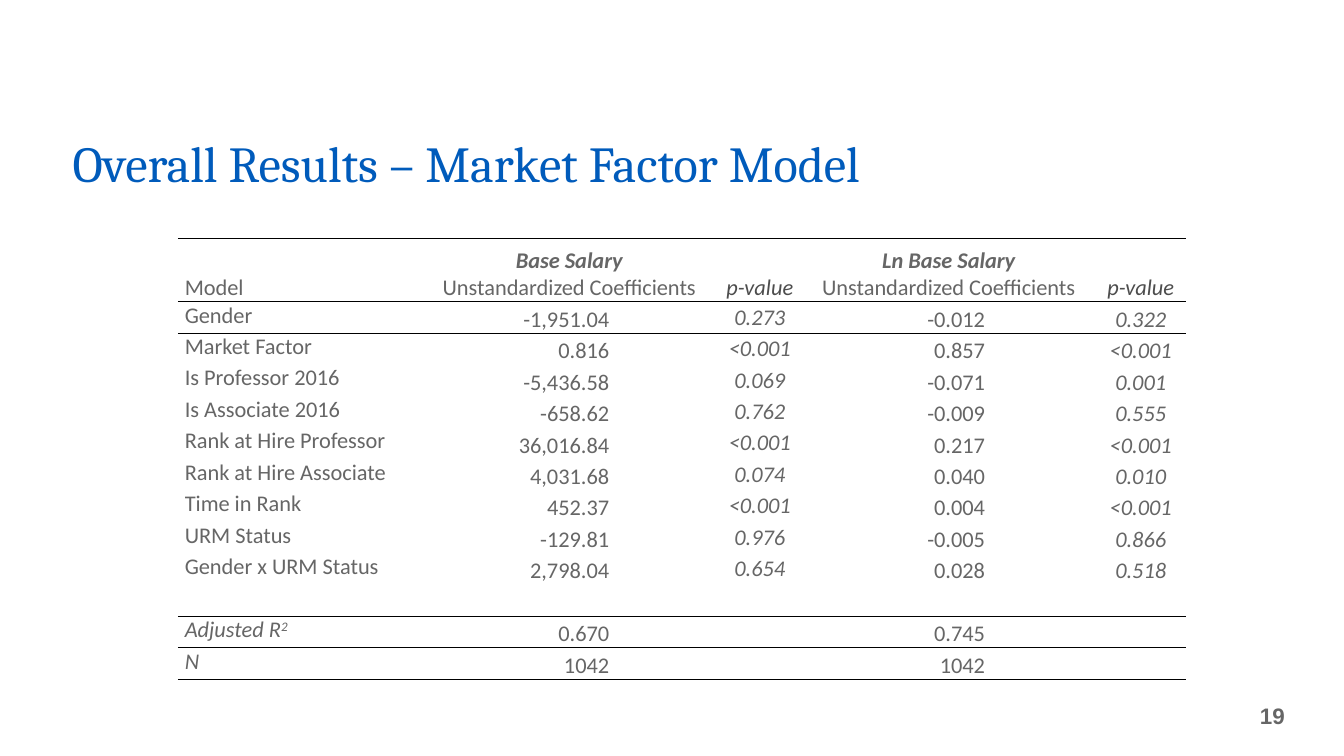
from lxml import etree
from pptx import Presentation
from pptx import util as u
from pptx.dml.color import RGBColor
from pptx.enum import text
from pptx.oxml.ns import qn

TITLE = "Overall Results – Market Factor Model"
PAGE = "19"
COEFFICIENTS = "Unstandardized Coefficients"
HEADER = ["Model", ["Base Salary", COEFFICIENTS], "p-value",
          ["Ln Base Salary", COEFFICIENTS], "p-value"]
ROWS = [
    ("Gender", "-1,951.04", "0.273", "-0.012", "0.322"),
    ("Market Factor", "0.816", "<0.001", "0.857", "<0.001"),
    ("Is Professor 2016", "-5,436.58", "0.069", "-0.071", "0.001"),
    ("Is Associate 2016", "-658.62", "0.762", "-0.009", "0.555"),
    ("Rank at Hire Professor", "36,016.84", "<0.001", "0.217", "<0.001"),
    ("Rank at Hire Associate", "4,031.68", "0.074", "0.040", "0.010"),
    ("Time in Rank", "452.37", "<0.001", "0.004", "<0.001"),
    ("URM Status", "-129.81", "0.976", "-0.005", "0.866"),
    ("Gender x URM Status", "2,798.04", "0.654", "0.028", "0.518"),
    ("", "", "", "", ""),
    ("Adjusted R", "0.670", "", "0.745", ""),
    ("N", "1042", "", "1042", ""),
]
SUMMARY = ("Adjusted R", "N")
COLORS = {"title": "005BBB", "text": "666666", "p_head": "4D4D4D", "rule": "000000"}
COLUMN_WIDTHS = [173.5, 139.7, 72.7, 59.8, 136, 74.2, 64.1]
VALUE_COLUMNS = [0, 1, 3, 4, 6]
HEADER_HEIGHT, ROW_HEIGHT = 45, 22.5
TOP_RULES, BOTTOM_RULES = (0, 1, 11), (0, 10, 12)

ALIGN, ANCHOR = text.PP_ALIGN, text.MSO_ANCHOR


def set_font(font, name, size, color, bold=False, italic=False):
    font.name, font.size = name, u.Pt(size)
    font.bold, font.italic = bold, italic
    font.color.rgb = RGBColor.from_string(COLORS[color])


def add_rule(cell, side):
    ln = etree.SubElement(cell._tc.get_or_add_tcPr(), qn("a:" + side), w=str(u.Pt(1)))
    fill = etree.SubElement(ln, qn("a:solidFill"))
    etree.SubElement(fill, qn("a:srgbClr"), val=COLORS["rule"])


def format_cell(cell, row):
    cell.margin_left = cell.margin_right = u.Pt(5)
    cell.margin_top = cell.margin_bottom = 0
    if row in TOP_RULES:
        add_rule(cell, "lnT")
    if row in BOTTOM_RULES:
        add_rule(cell, "lnB")
    cell.fill.background()
    set_font(cell.text_frame.paragraphs[0].font, "Calibri", 16, "text")


def fill_header(cell, value):
    lines = value if isinstance(value, list) else [value]
    cell.text = "\n".join(lines)
    cell.vertical_anchor = ANCHOR.BOTTOM
    for p in cell.text_frame.paragraphs:
        is_p, is_group = p.text == "p-value", p.text.endswith("Salary")
        p.alignment = ALIGN.LEFT if p.text == "Model" else ALIGN.CENTER
        set_font(p.font, "Calibri", 16, "p_head" if is_p else "text",
                 bold=is_group, italic=is_p or is_group)


def fill_value(cell, value, col):
    p = cell.text_frame.paragraphs[0]
    p.add_run().text = value
    if col == 0:
        p.alignment, cell.vertical_anchor = ALIGN.LEFT, ANCHOR.TOP
    elif col in (1, 4):
        p.alignment, cell.vertical_anchor = ALIGN.RIGHT, ANCHOR.BOTTOM
    else:
        p.alignment = ALIGN.CENTER
        cell.vertical_anchor = ANCHOR.MIDDLE if col == 3 else ANCHOR.BOTTOM
    if value == "Adjusted R":
        r = p.add_run()
        r.text = "2"
        r._r.get_or_add_rPr().set("baseline", "30000")
    set_font(p.font, "Calibri", 16, "text", italic=col in (3, 6) or value in SUMMARY)


def add_results(s):
    height = HEADER_HEIGHT + ROW_HEIGHT * len(ROWS)
    tbl = s.shapes.add_table(len(ROWS) + 1, len(COLUMN_WIDTHS), u.Pt(127), u.Pt(170.5),
                             u.Pt(sum(COLUMN_WIDTHS)), u.Pt(height)).table
    tbl.first_row = tbl.horz_banding = False
    style = tbl._tbl.tblPr.find(qn("a:tableStyleId"))
    style.text = "{2D5ABB26-0587-4C30-8999-92F81FD0307C}"
    for column, width in zip(tbl.columns, COLUMN_WIDTHS):
        column.width = u.Pt(width)
    for i, row in enumerate(tbl.rows):
        row.height = u.Pt(ROW_HEIGHT if i else HEADER_HEIGHT)
        for cell in row.cells:
            format_cell(cell, i)
    for col, value in zip(VALUE_COLUMNS, HEADER):
        if isinstance(value, list):
            tbl.cell(0, col).merge(tbl.cell(0, col + 1))
        fill_header(tbl.cell(0, col), value)
    for i, values in enumerate(ROWS, 1):
        for col, value in zip(VALUE_COLUMNS, values):
            if value:
                fill_value(tbl.cell(i, col), value, col)


def main():
    prs = Presentation()
    prs.slide_width, prs.slide_height = u.Pt(960), u.Pt(540)
    s = prs.slides.add_slide(prs.slide_layouts[5])

    title = s.shapes.title
    title.left, title.top, title.width, title.height = map(u.Pt, (44.6, 85, 884, 56))
    tf = title.text_frame
    tf.text = TITLE
    tf.auto_size, tf.vertical_anchor = text.MSO_AUTO_SIZE.NONE, ANCHOR.BOTTOM
    p = tf.paragraphs[0]
    p.alignment, p.line_spacing = ALIGN.LEFT, 0.8
    set_font(p.font, "Cambria", 36, "title")

    add_results(s)

    tf = s.shapes.add_textbox(*map(u.Pt, (870, 490, 57, 42))).text_frame
    tf.word_wrap, tf.vertical_anchor = True, ANCHOR.MIDDLE
    tf.margin_left = tf.margin_right = u.Pt(9.4)
    tf.margin_top = tf.margin_bottom = u.Pt(5)
    tf.text = PAGE
    p = tf.paragraphs[0]
    p.alignment = ALIGN.RIGHT
    set_font(p.font, "Arial", 16, "text", bold=True)

    prs.save("out.pptx")


if __name__ == "__main__":
    main()
